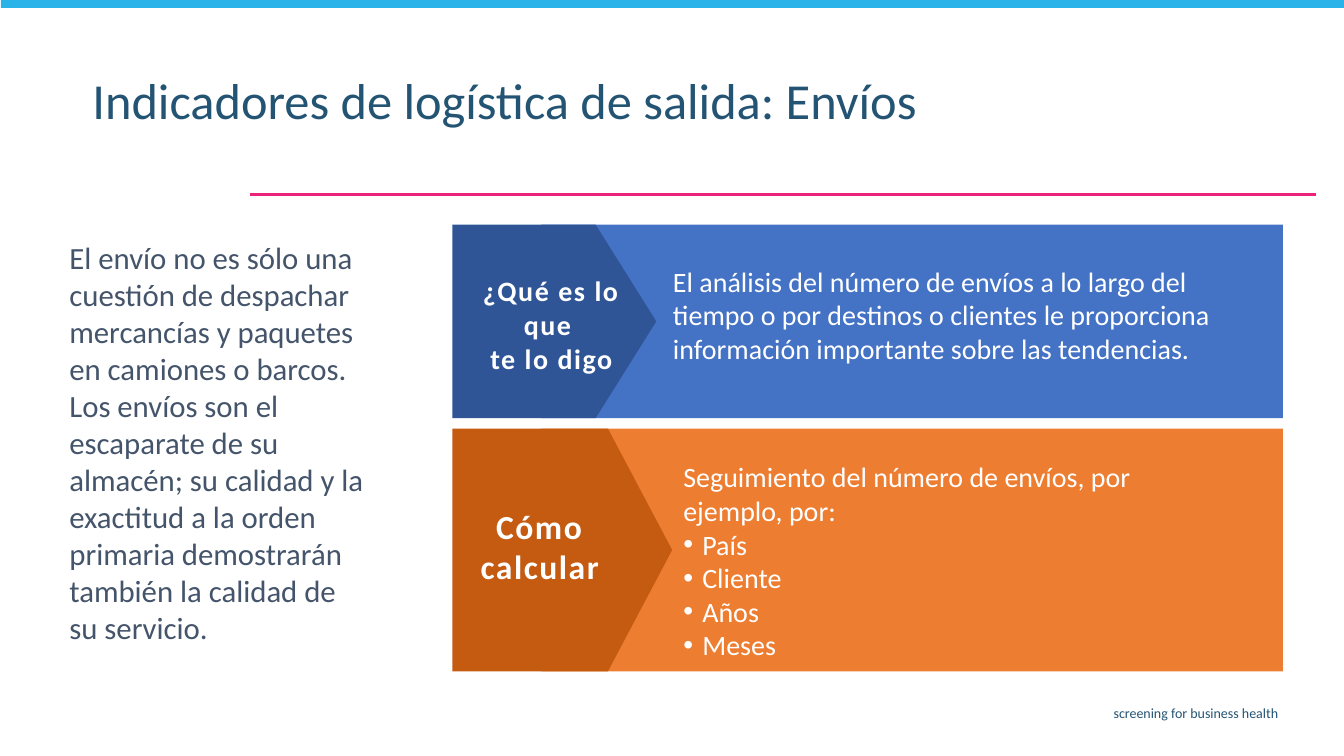
from dataclasses import dataclass

from lxml.etree import SubElement
from pptx import Presentation
from pptx.dml.color import RGBColor
from pptx.enum.shapes import MSO_CONNECTOR, MSO_SHAPE
from pptx.enum.text import MSO_ANCHOR, PP_ALIGN
from pptx.oxml.ns import qn
from pptx.util import Cm, Pt


@dataclass(frozen=True)
class Theme:
    font: str = "Calibri"
    navy: str = "245473"
    slate: str = "44546A"
    white: str = "FFFFFF"
    sky: str = "29B3E8"
    pink: str = "EC2179"
    blue: str = "4472C4"
    dark_blue: str = "2F5597"
    orange: str = "ED7D31"
    dark_orange: str = "C55A11"
    title: int = 36
    heading: int = 24
    intro: int = 22
    body: int = 20
    footer: int = 10


class SlideBuilder:
    def __init__(self, page, theme):
        self.page = page
        self.theme = theme

    def paint(self, shape, color):
        shape.shadow.inherit = False
        shape.fill.solid()
        shape.fill.fore_color.rgb = RGBColor.from_string(color)
        shape.line.fill.background()

    def bar(self, place, color):
        shape = self.page.shapes.add_shape(MSO_SHAPE.RECTANGLE, *map(Cm, place))
        self.paint(shape, color)

    def rule(self, start, end, color, width):
        line = self.page.shapes.add_connector(
            MSO_CONNECTOR.STRAIGHT, *map(Cm, start + end))
        line.line.color.rgb = RGBColor.from_string(color)
        line.line.width = Pt(width)
        SubElement(line._element.spPr, qn("a:effectLst"))

    def outline(self, points, color):
        corners = [(Cm(x), Cm(y)) for x, y in points]
        builder = self.page.shapes.build_freeform(*corners[0])
        builder.add_line_segments(corners[1:], close=True)
        self.paint(builder.convert_to_shape(), color)

    def text(self, place, lines, size, color, bullets=(), bold=False, spacing=0,
             inset=(0.25, 0.13), frame_format=None, para_format=None):
        box = self.page.shapes.add_textbox(*map(Cm, place))
        frame = box.text_frame
        side, edge = map(Cm, inset)
        settings = {"word_wrap": True, "margin_left": side, "margin_right": side,
                    "margin_top": edge, "margin_bottom": edge}
        for name, value in {**settings, **(frame_format or {})}.items():
            setattr(frame, name, value)
        for index, line in enumerate([*lines, *bullets]):
            para = frame.add_paragraph() if index else frame.paragraphs[0]
            for name, value in (para_format or {}).items():
                setattr(para, name, value)
            if index >= len(lines):
                self.bullet(para)
            span = para.add_run()
            span.text = line
            font = {"name": self.theme.font, "size": Pt(size), "bold": bold}
            for name, value in font.items():
                setattr(span.font, name, value)
            span.font.color.rgb = RGBColor.from_string(color)
            if spacing:
                span.font._element.set("spc", str(spacing))

    def bullet(self, para):
        properties = para._p.get_or_add_pPr()
        properties.set("marL", str(Cm(0.48)))
        properties.set("indent", str(-Cm(0.48)))
        SubElement(properties, qn("a:buFont"), typeface="Arial")
        SubElement(properties, qn("a:buChar"), char="•")

    def label(self, place, lines, size):
        self.text(place, lines, size, self.theme.white, bold=True, spacing=110,
                  inset=(0, 0), frame_format={"vertical_anchor": MSO_ANCHOR.MIDDLE},
                  para_format={"alignment": PP_ALIGN.CENTER})

    def band(self, top, bottom, shoulder, tip, color, dark_color):
        left, notch_left, notch_tip, right = 11.4, 13.64, 15.65, 32.33
        middle = (top + bottom) / 2
        self.outline([(notch_left, top), (notch_tip, middle), (notch_left, bottom),
                      (right, bottom), (right, top)], color)
        self.outline([(left, top), (shoulder, top), (tip, middle),
                      (shoulder, bottom), (left, bottom)], dark_color)


def main():
    deck = Presentation()
    deck.slide_width, deck.slide_height = Cm(33.87), Cm(19.05)
    theme = Theme()
    page = deck.slides.add_slide(deck.slide_layouts[6])
    slide = SlideBuilder(page, theme)

    # Frame: top bar, rule and footer
    slide.rule((33.17, 4.9), (6.3, 4.9), theme.pink, 1.5)
    slide.bar((0.02, 0, 33.85, 0.2), theme.sky)
    slide.text((9.27, 17.63, 23.19, 0.74), ["screening for business health"],
               theme.footer, theme.navy, para_format={"alignment": PP_ALIGN.RIGHT})

    # Title and introduction
    slide.text((2.08, 1.78, 25.25, 1.93), ["Indicadores de logística de salida: Envíos"],
               theme.title, theme.navy, para_format={"line_spacing": 0.9})
    slide.text((1.52, 5.92, 7.9, 11.51), [
        "El envío no es sólo una cuestión de despachar mercancías y paquetes en "
        "camiones o barcos. Los envíos son el escaparate de su almacén; su calidad "
        "y la exactitud a la orden primaria demostrarán también la calidad de su "
        "servicio."], theme.intro, theme.slate, inset=(0.23, 0.1))

    # What it tells
    slide.band(5.66, 10.54, 15.01, 16.54, theme.blue, theme.dark_blue)
    slide.label((11.76, 7.32, 4.27, 1.7), ["¿Qué es lo que ", "te lo digo"], theme.body)
    slide.text((16.71, 6.53, 14.35, 2.82), [
        "El análisis del número de envíos a lo largo del tiempo o por destinos o "
        "clientes le proporciona información importante sobre las tendencias."],
        theme.body, theme.white)

    # How to calculate
    slide.band(10.8, 16.92, 15.32, 16.94, theme.orange, theme.dark_orange)
    slide.label((11.05, 12.73, 5.11, 2.06), ["Cómo calcular"], theme.heading)
    slide.text((16.97, 11.46, 14.27, 5.21),
               ["Seguimiento del número de envíos, por ejemplo, por:"],
               theme.body, theme.white, bullets=["País", "Cliente", "Años", "Meses"])

    deck.save("out.pptx")


if __name__ == "__main__":
    main()
